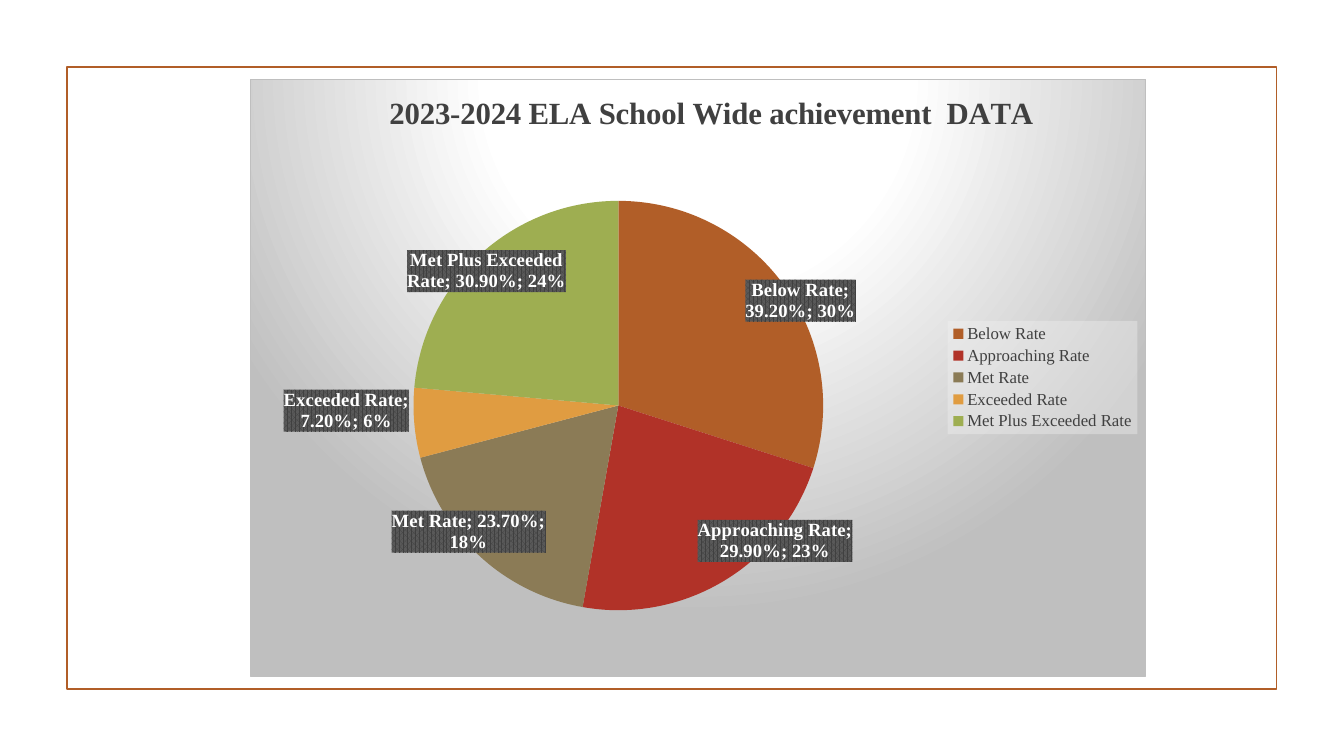
from pptx import Presentation
from pptx.chart.data import CategoryChartData
from pptx.dml.color import RGBColor
from pptx.enum.chart import XL_CHART_TYPE as ChartType, XL_LEGEND_POSITION as LegendPosition
from pptx.enum.shapes import MSO_SHAPE as Shape
from pptx.oxml import parse_xml
from pptx.oxml.ns import nsdecls, qn
from pptx.util import Pt

FONT = "Times New Roman"
COLORS = {
    "frame": "B15E28", "text": "404040", "label": "FFFFFF", "border": "BFBFBF",
    "light": "FFFFFF", "legend": "F2F2F2", "hatch": "404040", "hatch_back": "595959",
}
RATES = [
    ("Below Rate", 0.392, "B15E28", (11.1, -7.5)),
    ("Approaching Rate", 0.299, "B13228", (11.6, 8)),
    ("Met Rate", 0.237, "8B7B56", (-9, 8.5)),
    ("Exceeded Rate", 0.072, "E09C41", (-19, -0.6)),
    ("Met Plus Exceeded Rate", 0.309, "9EAE51", (-7, -9.9)),
]
LABEL_PERCENT = (15.5, 10.6)
C15 = "http://schemas.microsoft.com/office/drawing/2012/chart"


def rgb(name):
    """Return the named palette colour."""
    return RGBColor.from_string(COLORS[name])


def chart_xml(tag, content):
    """Build one chart element around the given XML content."""
    return parse_xml(f'<c:{tag} {nsdecls("c", "a")}>{content}</c:{tag}>')


def solid_xml(name, extra=""):
    """Return a solid fill in a palette colour."""
    return f'<a:solidFill><a:srgbClr val="{COLORS[name]}">{extra}</a:srgbClr></a:solidFill>'


def place(element, index, **percents):
    """Give a chart part a manual layout in percent of the chart."""
    for layout in element.findall(qn("c:layout")):
        element.remove(layout)
    modes = '<c:xMode val="edge"/><c:yMode val="edge"/>'
    sizes = "".join(f'<c:{key} val="{value / 100}"/>' for key, value in percents.items())
    target = '<c:layoutTarget val="inner"/>' if element.tag == qn("c:plotArea") else ""
    content = f"<c:manualLayout>{target}{modes}{sizes}</c:manualLayout>"
    element.insert(index, chart_xml("layout", content))


def add_frame(slide, left, top, width, height):
    """Draw the outlined frame around the slide content."""
    frame = slide.shapes.add_shape(Shape.RECTANGLE, left, top, width, height)
    frame.shadow.inherit = False
    frame.fill.background()
    frame.line.color.rgb = rgb("frame")
    frame.line.width = Pt(1.25)


def add_labels(series):
    """Label each slice with category, value and share on a hatched box."""
    style = (
        '<c:numFmt formatCode="0.00%" sourceLinked="1"/>'
        '<c:spPr><a:pattFill prst="pct75">'
        f'<a:fgClr><a:srgbClr val="{COLORS["hatch"]}"/></a:fgClr>'
        f'<a:bgClr><a:srgbClr val="{COLORS["hatch_back"]}"/></a:bgClr>'
        '</a:pattFill><a:ln><a:noFill/></a:ln></c:spPr>'
        '<c:txPr><a:bodyPr wrap="square"/><a:p><a:pPr><a:defRPr sz="1330" b="1">'
        f'{solid_xml("label")}<a:latin typeface="{FONT}"/>'
        '</a:defRPr></a:pPr><a:endParaRPr lang="en-US"/></a:p></c:txPr>'
        '<c:dLblPos val="ctr"/><c:showLegendKey val="0"/><c:showVal val="1"/>'
        '<c:showCatName val="1"/><c:showSerName val="0"/><c:showPercent val="1"/>'
        '<c:showBubbleSize val="0"/><c:separator>; </c:separator>'
    )
    width, height = LABEL_PERCENT
    size = (
        '<c:extLst><c:ext uri="{CE6537A1-D6FC-4f65-9D91-7224C49458BB}" '
        f'xmlns:c15="{C15}"><c15:layout><c:manualLayout><c:w val="{width / 100}"/>'
        f'<c:h val="{height / 100}"/></c:manualLayout></c15:layout></c:ext></c:extLst>'
    )
    points = "".join(
        f'<c:dLbl><c:idx val="{index}"/><c:layout><c:manualLayout>'
        f'<c:x val="{x / 100}"/><c:y val="{y / 100}"/></c:manualLayout></c:layout>'
        f'{style}{size}</c:dLbl>'
        for index, (_, _, _, (x, y)) in enumerate(RATES)
    )
    labels = chart_xml("dLbls", points + style + '<c:showLeaderLines val="0"/>')
    series._element.find(qn("c:cat")).addprevious(labels)


def add_title(chart):
    """Write the chart title."""
    chart.has_title = True
    text_frame = chart.chart_title.text_frame
    text_frame.text = "2023-2024 ELA School Wide achievement  DATA"
    font = text_frame.paragraphs[0].runs[0].font
    font.name, font.size, font.bold = FONT, Pt(22), True
    font.color.rgb = rgb("text")
    place(chart.chart_title._element, 1, x=14.9, y=1.4)


def add_legend(chart):
    """Add the translucent legend on the right."""
    chart.has_legend = True
    legend = chart.legend
    legend.position = LegendPosition.RIGHT
    legend.include_in_layout = False
    legend.font.name, legend.font.size = FONT, Pt(12)
    legend.font.color.rgb = rgb("text")
    place(legend._element, 1, x=77.9, y=40.4, w=21.2, h=19)
    fill = solid_xml("legend", '<a:alpha val="39000"/>')
    legend._element.find(qn("c:txPr")).addprevious(chart_xml("spPr", fill))


def add_background(chart):
    """Fill the chart with a radial gradient and a thin border."""
    stops = "".join(
        f'<a:gs pos="{position}"><a:srgbClr val="{COLORS[name]}"/></a:gs>'
        for position, name in ((0, "light"), (39000, "light"), (100000, "border"))
    )
    content = (
        f'<a:gradFill><a:gsLst>{stops}</a:gsLst><a:path path="circle">'
        '<a:fillToRect l="50000" t="-80000" r="50000" b="180000"/></a:path></a:gradFill>'
        f'<a:ln w="{Pt(0.75)}">{solid_xml("border")}</a:ln>'
    )
    chart._chartSpace.find(qn("c:chart")).addnext(chart_xml("spPr", content))


def add_rate_chart(slide, left, top, width, height):
    """Build the pie chart of achievement rates."""
    data = CategoryChartData(number_format="0.00%")
    data.categories = [name for name, *_ in RATES]
    data.add_series("Series 1", [value for _, value, *_ in RATES])
    chart = slide.shapes.add_chart(ChartType.PIE, left, top, width, height, data).chart
    chart.font.name, chart.font.size = FONT, Pt(10)
    plot = chart.plots[0]
    plot.vary_by_categories = True
    series = plot.series[0]
    for index, (_, _, color, _) in enumerate(RATES):
        fill = series.points[index].format.fill
        fill.solid()
        fill.fore_color.rgb = RGBColor.from_string(color)
    add_labels(series)
    add_title(chart)
    add_legend(chart)
    add_background(chart)
    plot_area = chart._chartSpace.find(f'{qn("c:chart")}/{qn("c:plotArea")}')
    place(plot_area, 0, x=18.2, y=20.3, w=45.8, h=68.6)


def main():
    """Create and save the presentation."""
    presentation = Presentation()
    presentation.slide_width, presentation.slide_height = Pt(960), Pt(540)
    slide = presentation.slides.add_slide(presentation.slide_layouts[6])
    add_frame(slide, Pt(47.8), Pt(48), Pt(864), Pt(444))
    add_rate_chart(slide, Pt(178.6), Pt(56.6), Pt(640), Pt(427))
    presentation.save("out.pptx")


if __name__ == "__main__":
    main()
